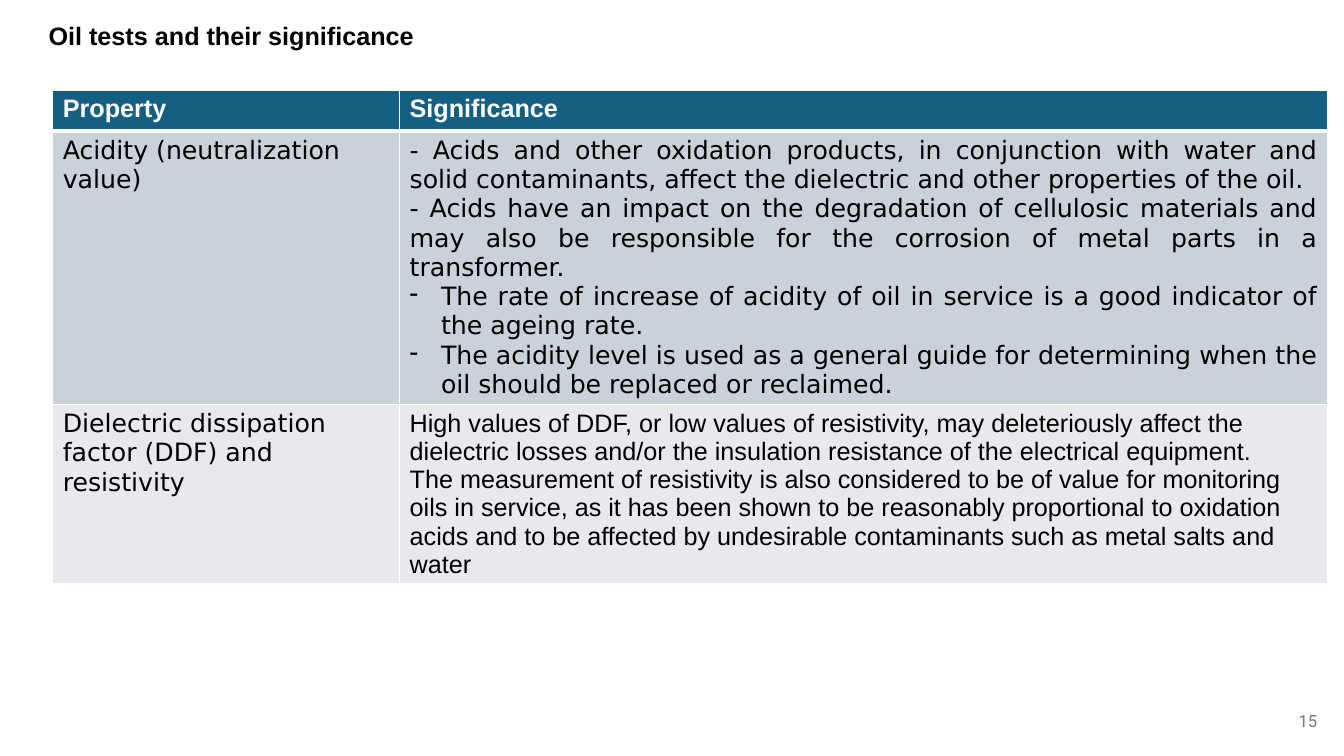
from lxml.etree import SubElement
from pptx import Presentation
from pptx.dml.color import RGBColor
from pptx.enum.text import MSO_ANCHOR, MSO_AUTO_SIZE, PP_ALIGN
from pptx.oxml import parse_xml
from pptx.oxml.ns import nsdecls, qn
from pptx.util import Cm, Pt

COLORS = {
    "head": "156082",
    "band": "CAD1D8",
    "pale": "E7E9EC",
    "white": "FFFFFF",
    "black": "000000",
    "grey": "757575",
}
SANS, WIDE, SMALL = "Arial", "DejaVu Sans", "Roboto"

ACIDITY = [
    "- Acids and other oxidation products, in conjunction with water and solid "
    "contaminants, affect the dielectric and other properties of the oil.",
    "- Acids have an impact on the degradation of cellulosic materials and may "
    "also be responsible for the corrosion of metal parts in a transformer.",
]
AGEING = [
    "The rate of increase of acidity of oil in service is a good indicator of "
    "the ageing rate.",
    "The acidity level is used as a general guide for determining when the oil "
    "should be replaced or reclaimed.",
]
LOSSES = [
    "High values of DDF, or low values of resistivity, may deleteriously affect "
    "the dielectric losses and/or the insulation resistance of the electrical "
    "equipment.",
    "The measurement of resistivity is also considered to be of value for "
    "monitoring oils in service, as it has been shown to be reasonably "
    "proportional to oxidation acids and to be affected by undesirable "
    "contaminants such as metal salts and water",
]


def write(frame, lines, font=SANS, size=18, color="black", bold=False,
          align=PP_ALIGN.LEFT, dashes=0):
    """Fill a text frame; the last `dashes` lines get a dash bullet."""
    frame.word_wrap = True
    for i, line in enumerate(lines):
        para = frame.paragraphs[0] if i == 0 else frame.add_paragraph()
        para.alignment = align
        run = para.add_run()
        run.text = line
        run.font.name = font
        run.font.size = Pt(size)
        run.font.bold = bold
        run.font.color.rgb = RGBColor.from_string(COLORS[color])
        if i >= len(lines) - dashes:
            add_dash(para)


def add_dash(para):
    props = para._p.get_or_add_pPr()
    indent = Cm(0.79)
    props.set("marL", str(indent))
    props.set("indent", str(-indent))
    tint = SubElement(props, qn("a:buClr"))
    SubElement(tint, qn("a:srgbClr"), val=COLORS["black"])
    SubElement(props, qn("a:buChar"), char="-")


def add_edges(cell, **widths):
    """Draw white cell borders, 1 pt unless a side is given another width."""
    props = cell._tc.get_or_add_tcPr()
    for i, side in enumerate("LRTB"):
        props.insert(i, parse_xml(
            f'<a:ln{side} {nsdecls("a")} w="{Pt(widths.get(side, 1))}">'
            f'<a:solidFill><a:srgbClr val="{COLORS["white"]}"/></a:solidFill>'
            f'</a:ln{side}>'))


class Deck:
    """Holds the presentation, its style and the current slide."""

    def __init__(self):
        self.show = Presentation()
        self.show.slide_width = Cm(33.87)
        self.show.slide_height = Cm(19.05)
        self.slide = self.show.slides.add_slide(self.show.slide_layouts[5])

    def title(self, text, *box):
        shape = self.slide.shapes.title
        shape.left, shape.top, shape.width, shape.height = map(Cm, box)
        frame = shape.text_frame
        frame.auto_size = MSO_AUTO_SIZE.NONE
        frame.vertical_anchor = MSO_ANCHOR.TOP
        write(frame, [text], bold=True)

    def label(self, text, *box, **style):
        frame = self.slide.shapes.add_textbox(*map(Cm, box)).text_frame
        frame.vertical_anchor = MSO_ANCHOR.MIDDLE
        write(frame, [text], **style)

    def table(self, rows, fills, left, top, widths, height):
        grid = self.slide.shapes.add_table(
            len(rows), len(widths), Cm(left), Cm(top),
            Cm(sum(widths)), Cm(height * len(rows))).table
        for column, width in zip(grid.columns, widths):
            column.width = Cm(width)
        for r, (row, fill) in enumerate(zip(rows, fills)):
            for c, (lines, style) in enumerate(row):
                cell = grid.cell(r, c)
                cell.fill.solid()
                cell.fill.fore_color.rgb = RGBColor.from_string(COLORS[fill])
                add_edges(cell, **({"B": 3} if r == 0 else {"T": 3} if r == 1 else {}))
                write(cell.text_frame, lines, **style)


def main():
    deck = Deck()
    deck.title("Oil tests and their significance", 0.97, 0.38, 31.17, 1.02)
    head = {"color": "white", "bold": True}
    name = {"font": WIDE}
    points = {"font": WIDE, "align": PP_ALIGN.JUSTIFY, "dashes": len(AGEING)}
    rows = [
        [(["Property"], head), (["Significance"], head)],
        [(["Acidity (neutralization value)"], name), (ACIDITY + AGEING, points)],
        [(["Dielectric dissipation factor (DDF) and resistivity"], name),
         (LOSSES, {})],
    ]
    deck.table(rows, ["head", "band", "pale"], 1.33, 2.27, [8.74, 23.39], 1.03)
    deck.label("15", 32.13, 17.68, 1.32, 0.99, font=SMALL, size=12,
               color="grey", align=PP_ALIGN.RIGHT)
    deck.show.save("out.pptx")


if __name__ == "__main__":
    main()
